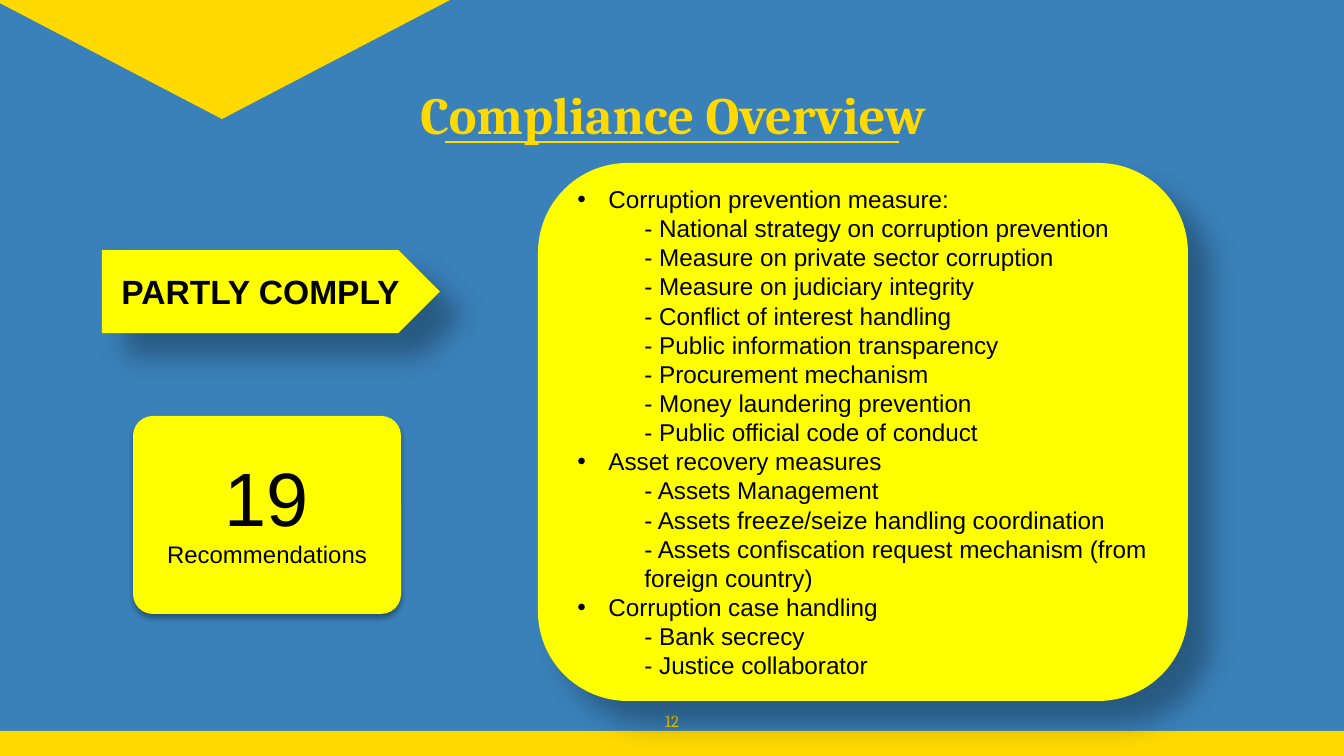
from dataclasses import dataclass

from lxml import etree
from pptx import Presentation
from pptx.dml.color import RGBColor
from pptx.enum.shapes import MSO_CONNECTOR, MSO_SHAPE
from pptx.enum.text import MSO_ANCHOR, MSO_AUTO_SIZE, PP_ALIGN
from pptx.oxml.ns import qn
from pptx.util import Emu, Pt

LINE = MSO_CONNECTOR.STRAIGHT
RECT, CONE = MSO_SHAPE.RECTANGLE, MSO_SHAPE.ISOSCELES_TRIANGLE
PANEL, ARROW = MSO_SHAPE.FLOWCHART_ALTERNATE_PROCESS, MSO_SHAPE.PENTAGON
ROUND = MSO_SHAPE.ROUNDED_RECTANGLE
TOP, MIDDLE = MSO_ANCHOR.TOP, MSO_ANCHOR.MIDDLE
LEFT, CENTER = PP_ALIGN.LEFT, PP_ALIGN.CENTER
FIXED = MSO_AUTO_SIZE.NONE
SCALE = 914400 / 134.4
WIDE, HIGH = 1344, 756


@dataclass(frozen=True)
class Theme:
    """Colours, fonts and type sizes of the deck."""
    back: str = "3A81BA"
    gold: str = "FFD900"
    bright: str = "FFFF00"
    ink: str = "000000"
    serif: str = "Cambria"
    sans: str = "Arial"
    title: float = 28
    count: float = 40.5
    label: float = 18
    body: float = 13
    note: float = 12.8
    page: float = 9


THEME = Theme()
DEEP = (30, 15, 18, 45)
SOFT = (35, 3.1, 1.8, 90)

TOPICS = {
    "Corruption prevention measure:": [
        "National strategy on corruption prevention",
        "Measure on private sector corruption",
        "Measure on judiciary integrity",
        "Conflict of interest handling",
        "Public information transparency",
        "Procurement mechanism",
        "Money laundering prevention",
        "Public official code of conduct",
    ],
    "Asset recovery measures": [
        "Assets Management",
        "Assets freeze/seize handling coordination",
        "Assets confiscation request mechanism (from foreign country)",
    ],
    "Corruption case handling": ["Bank secrecy", "Justice collaborator"],
}


def px(size):
    """Turn pixels into EMU."""
    return Emu(round(size * SCALE))


def tint(code):
    """Turn a hex code into a colour."""
    return RGBColor.from_string(code)


class Page:
    """Holds the theme and the current slide."""

    def __init__(self, deck, theme):
        """Add a slide with a plain ground."""
        self.theme = theme
        self.slide = deck.slides.add_slide(deck.slide_layouts[5])
        fill = self.slide.background.fill
        fill.solid()
        fill.fore_color.rgb = tint(theme.back)

    def shape(self, kind, box, color, shade=None, bend=None):
        """Draw a filled shape with an optional shadow."""
        item = self.slide.shapes.add_shape(kind, *map(px, box))
        item.shadow.inherit = False
        item.fill.solid()
        item.fill.fore_color.rgb = tint(color)
        item.line.fill.background()
        if bend is not None:
            item.adjustments[0] = bend
        if shade:
            self.shade(item, *shade)
        return item

    def shade(self, item, alpha, blur, dist, angle):
        """Cast an outer shadow."""
        effects = item._element.spPr.find(qn("a:effectLst"))
        outer = etree.SubElement(
            effects, qn("a:outerShdw"), blurRad=str(Pt(blur)),
            dist=str(Pt(dist)), dir=str(angle * 60000), algn="tl", rotWithShape="0")
        ink = etree.SubElement(outer, qn("a:srgbClr"), val=self.theme.ink)
        etree.SubElement(ink, qn("a:alpha"), val=str(alpha * 1000))

    def line(self, start, end, width):
        """Draw a gold rule."""
        rule = self.slide.shapes.add_connector(LINE, *map(px, start + end))
        rule.line.color.rgb = tint(self.theme.gold)
        rule.line.width = Pt(width)
        etree.SubElement(rule._element.spPr, qn("a:effectLst"))

    def frame(self, item, inset=None, anchor=MIDDLE):
        """Set up the text frame of an item."""
        frame = item.text_frame
        frame.word_wrap = True
        frame.auto_size = FIXED
        frame.vertical_anchor = anchor
        if inset is not None:
            frame.margin_left = frame.margin_right = px(inset)
            frame.margin_top = frame.margin_bottom = px(inset)
        return frame

    def text(self, frame, words, size, font=None, color=None, bold=False, align=CENTER):
        """Add one paragraph with one run."""
        first = frame.paragraphs[0]
        para = frame.add_paragraph() if first.runs else first
        para.alignment = align
        run = para.add_run()
        run.text = words
        run.font.size = Pt(size)
        run.font.name = font or self.theme.sans
        run.font.bold = bold
        run.font.color.rgb = tint(color or self.theme.ink)
        return para

    def title(self, words, box):
        """Place and fill the title."""
        item = self.slide.shapes.title
        item.left, item.top, item.width, item.height = map(px, box)
        self.text(self.frame(item, 13), words, self.theme.title,
                  self.theme.serif, self.theme.gold, True)

    def number(self, words, box):
        """Add the page number."""
        item = self.slide.shapes.add_textbox(*map(px, box))
        self.text(self.frame(item, 13, TOP), words, self.theme.page,
                  self.theme.serif, self.theme.gold)

    def topics(self, frame, groups):
        """Add bulleted heads with dashed items below."""
        for head, items in groups.items():
            para = self.text(frame, head, self.theme.body, align=LEFT)
            props = para._p.get_or_add_pPr()
            props.set("marL", str(px(31)))
            props.set("indent", str(px(-31)))
            etree.SubElement(props, qn("a:buFont"), typeface=self.theme.sans)
            etree.SubElement(props, qn("a:buChar"), char="•")
            for words in items:
                para = self.text(frame, f"- {words}", self.theme.body, align=LEFT)
                para.level = 1
                props = para._p.get_or_add_pPr()
                props.set("marL", str(px(67)))
                props.set("indent", "0")


def main():
    """Build and save the deck."""
    deck = Presentation()
    deck.slide_width, deck.slide_height = px(WIDE), px(HIGH)
    page = Page(deck, THEME)

    page.line((445, 142), (899, 142), 1.5)
    page.shape(RECT, (0, 731, WIDE, HIGH - 731), THEME.gold)
    page.title("Compliance Overview", (179, 73, 988, 81))
    page.number("12", (632, 698, 80, 58))
    page.shape(CONE, (-6, 0, 456, 119), THEME.gold).rotation = 180

    panel = page.shape(PANEL, (538, 163, 650, 538), THEME.bright, DEEP)
    page.topics(page.frame(panel), TOPICS)

    arrow = page.shape(ARROW, (102, 250, 338, 83), THEME.bright, DEEP)
    page.text(page.frame(arrow), "PARTLY COMPLY", THEME.label, bold=True)

    card = page.shape(ROUND, (133, 416, 268, 198), THEME.bright, SOFT, 0.1)
    frame = page.frame(card, 4)
    for words, size in (("19", THEME.count), ("Recommendations", THEME.note)):
        page.text(frame, words, size).line_spacing = 0.9

    deck.save("out.pptx")


if __name__ == "__main__":
    main()
